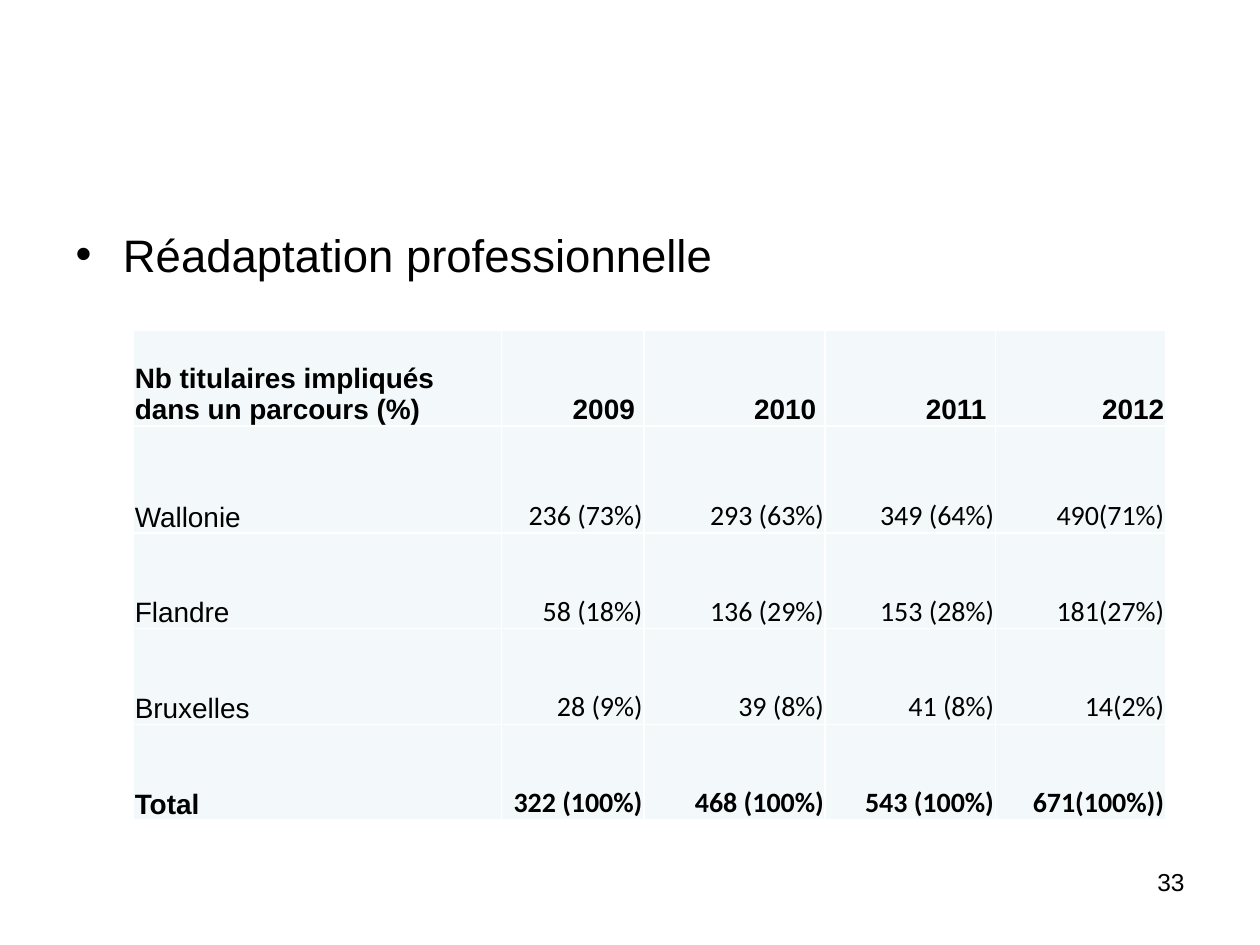
from lxml import etree
from pptx import Presentation
from pptx import util as u
from pptx.dml import color
from pptx.enum import text
from pptx.oxml import ns

HUES = {"ink": "000000", "cell": "F3F9FA", "rule": "FFFFFF"}
COLS = [2.92, 1.13, 1.44, 1.35, 1.35]
ROWS = [0.76, 0.85, 0.76, 0.76, 0.76]
DATA = [
    ["Nb titulaires impliqués dans un parcours (%)", "2009 ", "2010 ", "2011 ", "2012"],
    ["Wallonie", "236 (73%)", "293 (63%)", "349 (64%)", "490(71%)"],
    ["Flandre", "58 (18%)", "136 (29%)", "153 (28%)", "181(27%)"],
    ["Bruxelles", "28 (9%)", "39 (8%)", "41 (8%)", "14(2%)"],
    ["Total", "322 (100%)", "468 (100%)", "543 (100%)", "671(100%))"],
]
PAD = {
    "margin_left": u.Inches(0.01),
    "margin_right": u.Inches(0.01),
    "margin_top": u.Inches(0.01),
    "margin_bottom": 0,
    "vertical_anchor": text.MSO_ANCHOR.BOTTOM,
}


def apply(obj, vals):
    """Set each attribute of an object from a dict."""
    for key, val in vals.items():
        setattr(obj, key, val)


def place(shape, left, top, width, height):
    """Put a shape at a position given in inches."""
    names = ("left", "top", "width", "height")
    spots = map(u.Inches, (left, top, width, height))
    apply(shape, dict(zip(names, spots)))


def write(frame, words, size, face="Arial", bold=False, align=text.PP_ALIGN.LEFT):
    """Write one formatted paragraph into a text frame."""
    frame.text = words
    para = frame.paragraphs[0]
    apply(para, {"alignment": align, "space_before": u.Pt(0)})
    font = para.runs[0].font
    apply(font, {"name": face, "size": u.Pt(size), "bold": bold})
    font.color.rgb = color.RGBColor.from_string(HUES["ink"])


def edge(cell):
    """Draw the four thin borders of a cell."""
    props = cell._tc.get_or_add_tcPr()
    for spot, tag in enumerate(("a:lnL", "a:lnR", "a:lnT", "a:lnB")):
        line = etree.Element(ns.qn(tag), w=str(u.Pt(1)))
        fill = etree.SubElement(line, ns.qn("a:solidFill"))
        etree.SubElement(fill, ns.qn("a:srgbClr"), val=HUES["rule"])
        props.insert(spot, line)


def add_list(slide, words):
    """Fill the body placeholder with one bullet."""
    body = slide.placeholders[1]
    place(body, 0.5, 1.75, 9, 4.95)
    write(body.text_frame, words, 26)


def add_page(slide, words):
    """Add the page number at the lower right."""
    box = slide.shapes.add_textbox(0, 0, 0, 0)
    place(box, 7.17, 6.83, 2.33, 0.52)
    box.text_frame.word_wrap = True
    write(box.text_frame, words, 14, align=text.PP_ALIGN.RIGHT)


def add_grid(slide):
    """Add the table of participants by region and year."""
    spots = map(u.Inches, (1.06, 2.62, sum(COLS), sum(ROWS)))
    grid = slide.shapes.add_table(len(ROWS), len(COLS), *spots).table
    apply(grid, {"first_row": False, "horz_banding": False})
    for col, width in zip(grid.columns, COLS):
        col.width = u.Inches(width)
    for row, height in zip(grid.rows, ROWS):
        row.height = u.Inches(height)
    for r, row in enumerate(DATA):
        for c, words in enumerate(row):
            cell = grid.cell(r, c)
            apply(cell, PAD)
            cell.fill.solid()
            cell.fill.fore_color.rgb = color.RGBColor.from_string(HUES["cell"])
            edge(cell)
            face = "Calibri" if r and c else "Arial"
            bold = r in (0, len(DATA) - 1)
            align = text.PP_ALIGN.RIGHT if c else text.PP_ALIGN.LEFT
            write(cell.text_frame, words, 16, face, bold, align)


def main():
    """Build and save the slide."""
    deck = Presentation()
    apply(deck, {"slide_width": u.Inches(10), "slide_height": u.Inches(7.5)})
    slide = deck.slides.add_slide(deck.slide_layouts[1])
    title = slide.shapes.title._element
    title.getparent().remove(title)
    add_list(slide, "Réadaptation professionnelle")
    add_page(slide, "33")
    add_grid(slide)
    deck.save("out.pptx")


if __name__ == "__main__":
    main()
